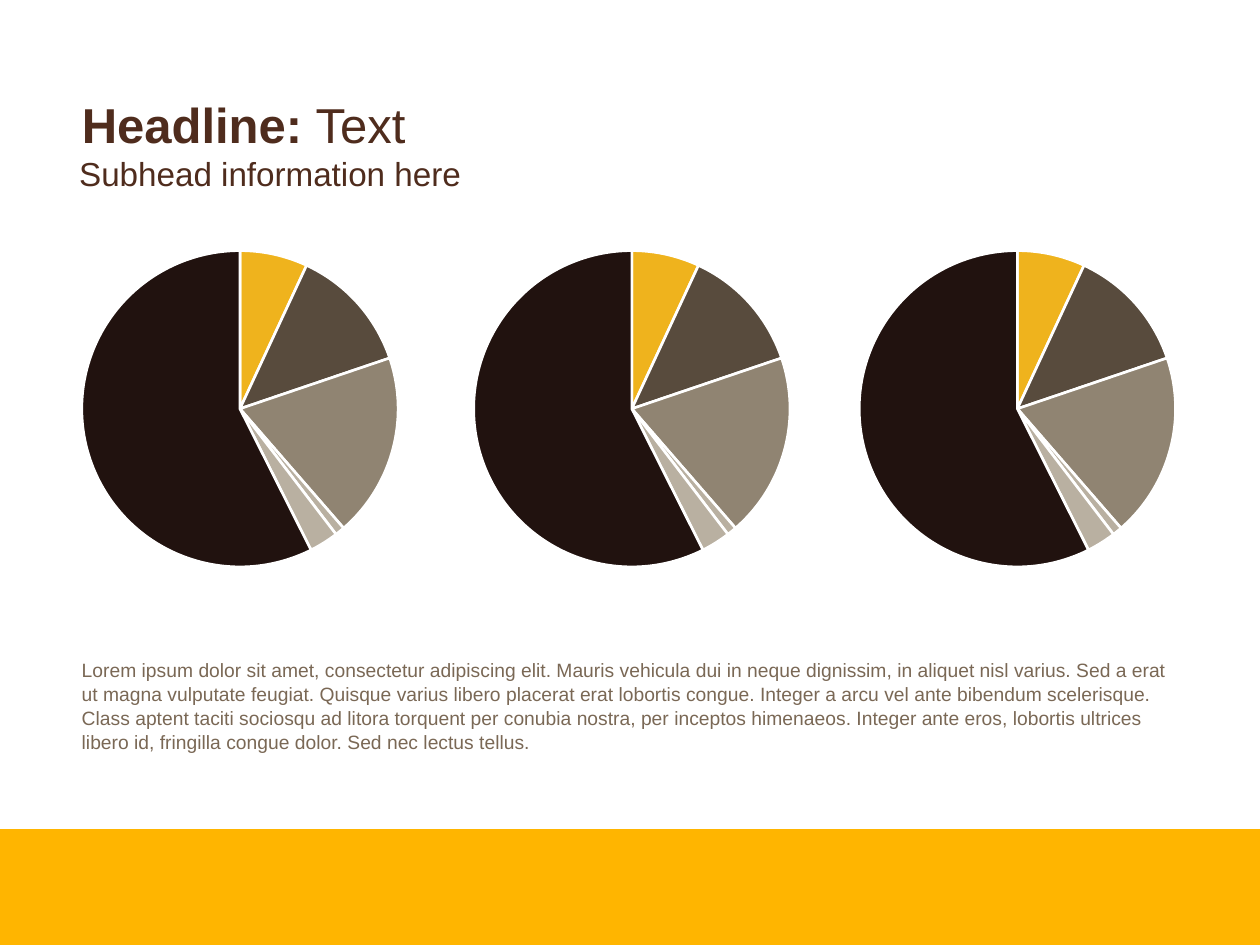
from dataclasses import dataclass

from lxml.etree import SubElement
from pptx import Presentation
from pptx.chart.data import CategoryChartData
from pptx.dml.color import RGBColor
from pptx.enum.chart import XL_CHART_TYPE
from pptx.enum.shapes import MSO_SHAPE
from pptx.enum.text import MSO_ANCHOR, PP_ALIGN
from pptx.oxml.ns import qn
from pptx.util import Inches, Pt


@dataclass(frozen=True)
class Theme:
    """Colours, fonts and type sizes."""
    font: str = "Arial"
    label: str = "Calibri"
    brown: str = "4F2C1D"
    taupe: str = "7A6855"
    gold: str = "FFB500"
    white: str = "FFFFFF"
    black: str = "000000"
    slices: tuple = ("EFB31D", "584B3D", "908472", "B9B0A1", "B9B0A1", "21120F")
    head: float = 28
    sub: float = 19
    body: float = 11
    note: float = 12


THEME = Theme()
SHARES = (7, 13, 19, 1, 3, 58)
COPY = (
    "Lorem ipsum dolor sit amet, consectetur adipiscing elit. Mauris vehicula "
    "dui in neque dignissim, in aliquet nisl varius. Sed a erat ut magna "
    "vulputate feugiat. Quisque varius libero placerat erat lobortis congue. "
    "Integer a arcu vel ante bibendum scelerisque. Class aptent taciti sociosqu "
    "ad litora torquent per conubia nostra, per inceptos himenaeos. Integer ante "
    "eros, lobortis ultrices libero id, fringilla congue dolor. Sed nec lectus "
    "tellus."
)


def apply(item, values):
    """Set each named value on an item."""
    for name, value in values.items():
        setattr(item, name, value)


def style(font, size, color, name=THEME.font, bold=False):
    """Format a font."""
    apply(font, {"name": name, "size": Pt(size), "bold": bold})
    font.color.rgb = RGBColor.from_string(color)


def place(shape, box):
    """Move a shape to a box given in inches."""
    names = ("left", "top", "width", "height")
    apply(shape, dict(zip(names, map(Inches, box))))


def title(slide, box):
    """Fill the title placeholder."""
    shape = slide.shapes.title
    place(shape, box)
    frame = shape.text_frame
    apply(frame, {"word_wrap": True, "vertical_anchor": MSO_ANCHOR.MIDDLE})
    para = frame.paragraphs[0]
    para.alignment = PP_ALIGN.LEFT
    for text, bold in (("Headline: ", True), ("Text", False)):
        run = para.add_run()
        run.text = text
        style(run.font, THEME.head, THEME.brown, bold=bold)


def text(slide, box, words, size, color, frame={}, para={}):
    """Add a wrapped text box with one paragraph."""
    body = slide.shapes.add_textbox(*map(Inches, box)).text_frame
    apply(body, {"word_wrap": True, **frame})
    line = body.paragraphs[0]
    apply(line, para)
    run = line.add_run()
    run.text = words
    style(run.font, size, color)


def inset(chart, edge):
    """Leave an even margin around the plot, as a share of the chart."""
    area = chart._chartSpace.find(".//" + qn("c:plotArea"))
    for old in area.findall(qn("c:layout")):
        area.remove(old)
    layout = SubElement(area, qn("c:layout"))
    area.insert(0, layout)
    manual = SubElement(layout, qn("c:manualLayout"))
    span = 1 - 2 * edge
    parts = {"layoutTarget": "inner", "xMode": "edge", "yMode": "edge",
             "x": edge, "y": edge, "w": span, "h": span}
    for name, value in parts.items():
        SubElement(manual, qn("c:" + name)).set("val", str(value))


def pie(slide, box):
    """Add one pie chart."""
    data = CategoryChartData()
    data.categories = [str(n + 1) for n in range(len(SHARES))]
    data.add_series("Series 1", SHARES)
    chart = slide.shapes.add_chart(
        XL_CHART_TYPE.PIE, *map(Inches, box), data).chart
    apply(chart, {"has_title": False, "has_legend": False})
    style(chart.font, THEME.note, THEME.black, THEME.label)
    inset(chart, 0.05)
    plot = chart.plots[0]
    plot.vary_by_categories = True
    for index, color in enumerate(THEME.slices):
        form = plot.series[0].points[index].format
        form.fill.solid()
        form.fill.fore_color.rgb = RGBColor.from_string(color)
        form.line.color.rgb = RGBColor.from_string(THEME.white)
        form.line.width = Pt(1.5)


def pies(slide, box, lefts):
    """Place a row of equal pies at offsets within a box."""
    left, top, width, height = box
    for shift in lefts:
        pie(slide, (left + shift, top, width, height))


def band(slide, box):
    """Draw the footer band."""
    shape = slide.shapes.add_shape(MSO_SHAPE.RECTANGLE, *map(Inches, box))
    shape.shadow.inherit = False
    shape.fill.solid()
    shape.fill.fore_color.rgb = RGBColor.from_string(THEME.gold)
    shape.line.fill.background()


def main():
    """Build and save the slide."""
    deck = Presentation()
    apply(deck, {"slide_width": Inches(10), "slide_height": Inches(7.5)})
    slide = deck.slides.add_slide(deck.slide_layouts[5])
    band(slide, (0, 6.58, 10, 0.92))
    title(slide, (0.55, 0.36, 8.45, 1.25))
    text(slide, (0.53, 1.17, 3.52, 0.42), "Subhead information here",
         THEME.sub, THEME.brown)
    pies(slide, (0.51, 1.84, 2.79, 2.81), (0, 3.11, 6.17))
    text(slide, (0.55, 5.01, 8.92, 1.37), COPY, THEME.body, THEME.taupe,
         {"vertical_anchor": MSO_ANCHOR.MIDDLE, "margin_bottom": Inches(0.24)},
         {"line_spacing": 1.04})
    deck.save("out.pptx")


if __name__ == "__main__":
    main()
